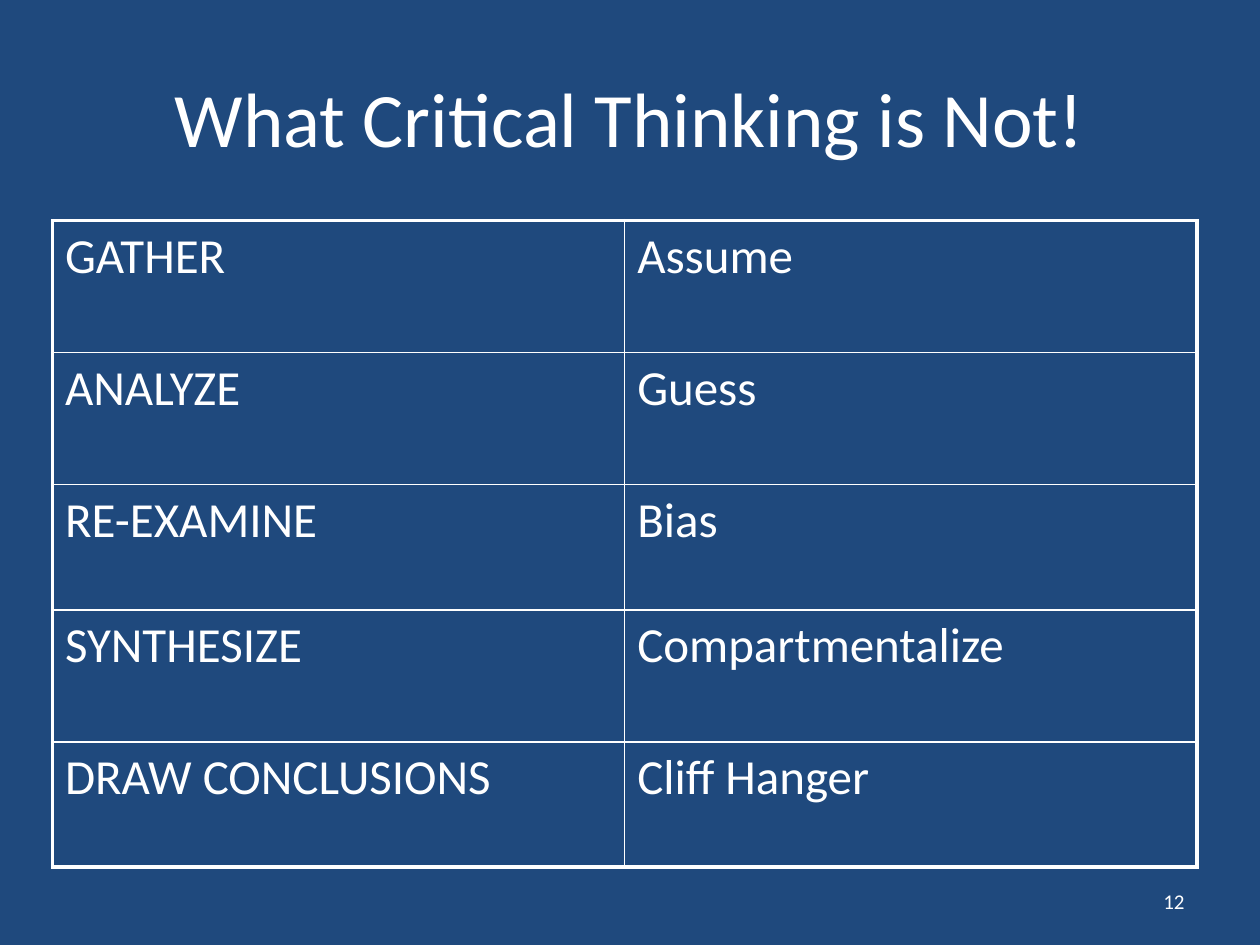
from lxml import etree
from pptx import Presentation
from pptx.dml.color import RGBColor
from pptx.enum.text import MSO_ANCHOR, PP_ALIGN
from pptx.oxml.ns import qn
from pptx.util import Pt

LEFT, CENTER, RIGHT = PP_ALIGN.LEFT, PP_ALIGN.CENTER, PP_ALIGN.RIGHT
MIDDLE = MSO_ANCHOR.MIDDLE
NAVY = RGBColor(0x1F, 0x49, 0x7D)
WHITE = RGBColor(0xFF, 0xFF, 0xFF)
FONT = "Calibri"
OUTER, INNER = 2.25, 1

# Content
TITLE = "What Critical Thinking is Not!"
PAGE_NUMBER = "12"
CONTRASTS = [
    ("GATHER", "Assume"),
    ("ANALYZE", "Guess"),
    ("RE-EXAMINE", "Bias"),
    ("SYNTHESIZE", "Compartmentalize"),
    ("DRAW CONCLUSIONS", "Cliff Hanger"),
]
ROW_HEIGHTS = [75.5, 75.5, 71.5, 75.5, 71.5]
TABLE_LEFT, TABLE_TOP, COLUMN_WIDTH = 30, 126, 327


def write(frame, text, size, align=LEFT):
    para = frame.paragraphs[0]
    para.alignment = align
    span = para.add_run()
    span.text = text
    span.font.name = FONT
    span.font.size = Pt(size)
    span.font.color.rgb = WHITE


def place(shape, left, top, width, height):
    shape.left, shape.top = Pt(left), Pt(top)
    shape.width, shape.height = Pt(width), Pt(height)


def set_borders(cell, widths):
    """Draw the sides of a cell; lines must come before the fill in the XML."""
    properties = cell._tc.get_or_add_tcPr()
    for position, (side, width) in enumerate(widths.items()):
        line = etree.Element(qn(f"a:ln{side}"), w=str(Pt(width)))
        fill = etree.SubElement(line, qn("a:solidFill"))
        etree.SubElement(fill, qn("a:srgbClr"), val=str(WHITE))
        properties.insert(position, line)


deck = Presentation()
deck.slide_width, deck.slide_height = Pt(720), Pt(540)
page = deck.slides.add_slide(deck.slide_layouts[5])
page.background.fill.solid()
page.background.fill.fore_color.rgb = NAVY

# Title
title = page.shapes.title
place(title, 36, 21.6, 648, 90)
title.text_frame.vertical_anchor = MIDDLE
write(title.text_frame, TITLE, 44, align=CENTER)

# Table: heavy outer frame, thin inner grid
row_count, column_count = len(CONTRASTS), len(CONTRASTS[0])
table = page.shapes.add_table(
    row_count, column_count, Pt(TABLE_LEFT), Pt(TABLE_TOP),
    Pt(COLUMN_WIDTH * column_count), Pt(sum(ROW_HEIGHTS))).table
table.first_row = table.horz_banding = False
for column in table.columns:
    column.width = Pt(COLUMN_WIDTH)
for r, (words, height) in enumerate(zip(CONTRASTS, ROW_HEIGHTS)):
    table.rows[r].height = Pt(height)
    for c, word in enumerate(words):
        cell = table.cell(r, c)
        cell.fill.background()
        write(cell.text_frame, word, 28)
        set_borders(cell, {
            "L": OUTER if c == 0 else INNER,
            "R": OUTER if c == column_count - 1 else INNER,
            "T": OUTER if r == 0 else INNER,
            "B": OUTER if r == row_count - 1 else INNER,
        })

# Page number
number = page.shapes.add_textbox(Pt(516), Pt(500.5), Pt(168), Pt(28.75))
number.text_frame.word_wrap = True
number.text_frame.vertical_anchor = MIDDLE
write(number.text_frame, PAGE_NUMBER, 12, align=RIGHT)

deck.save("out.pptx")
